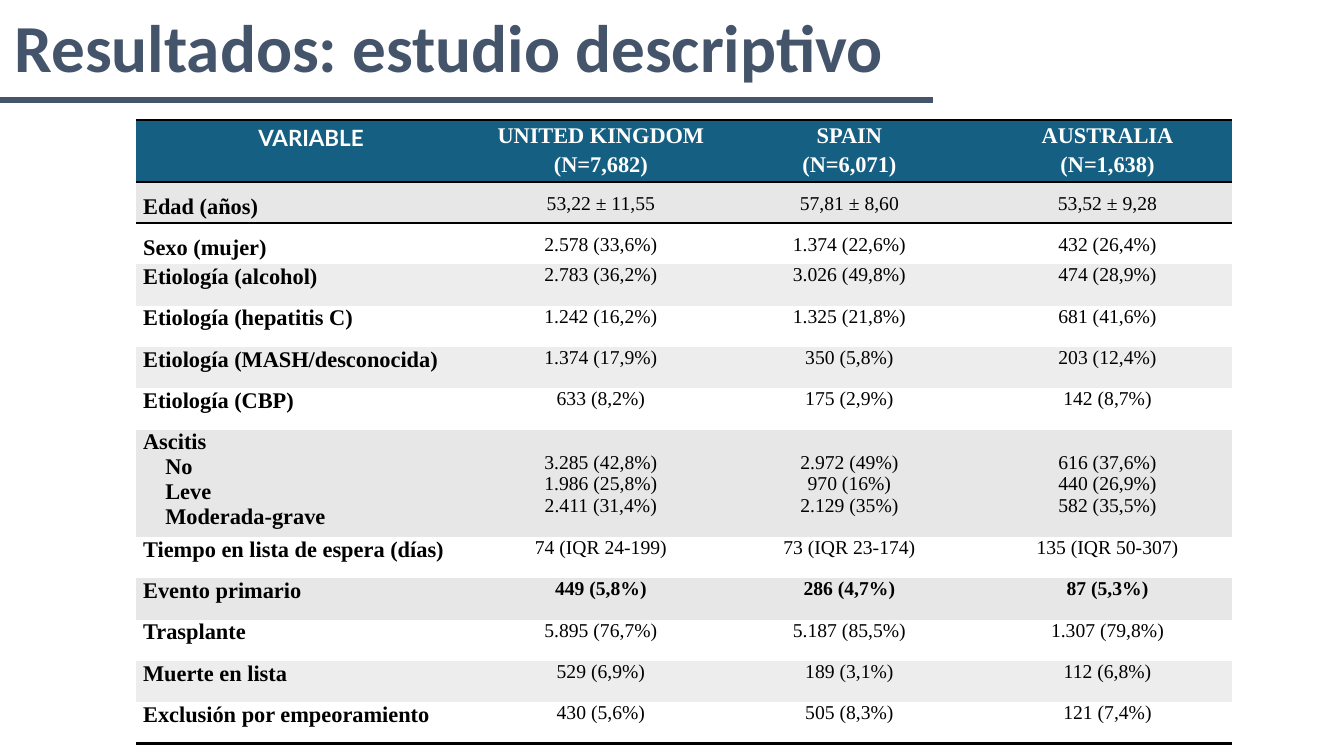
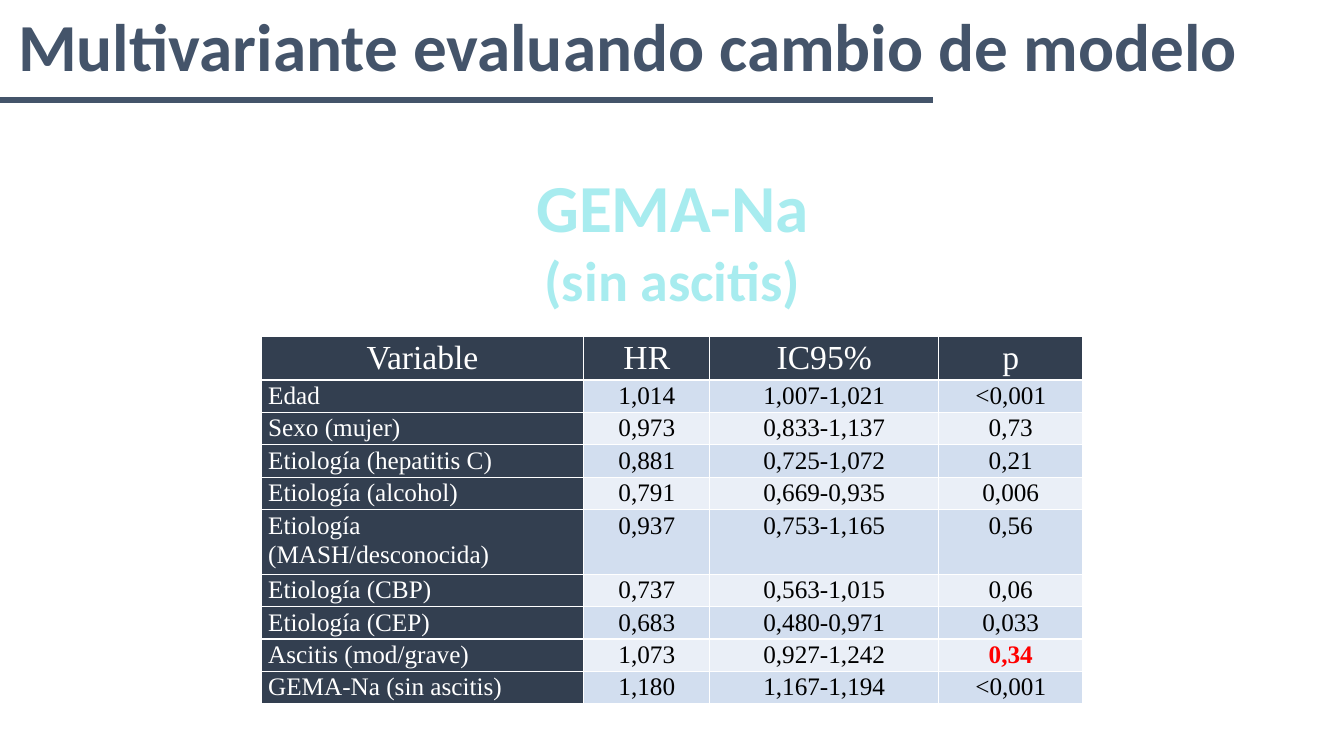
import pptx
import pptx.dml.color
import pptx.enum.shapes
import pptx.enum.text
import pptx.oxml
import pptx.oxml.ns
import pptx.util
from pptx.util import Inches

SLATE = "44546A"
NAVY = "333F50"
TEAL = "156082"
AQUA = "A8ECEF"
BLACK = "000000"
WHITE = "FFFFFF"
RED = "FF0000"
GREY = "E7E7E7"
LIGHT_GREY = "EDEDED"
BLUE_BANDS = ("D2DEEF", "EAEFF7")

SERIF = "Times New Roman"
NO_GRID_STYLE = "{2D5ABB26-0587-4C30-8999-92F81FD0307C}"
CENTER = pptx.enum.text.PP_ALIGN.CENTER
LEFT = pptx.enum.text.PP_ALIGN.LEFT
TITLE_FONT = {"name": "Calibri", "size": pptx.util.Pt(48), "bold": True}
CELL_MARGINS = {
    "margin_left": Inches(0.07),
    "margin_right": Inches(0.07),
    "margin_top": 0,
    "margin_bottom": 0,
}

DESCRIPTIVE_ROWS = [
    ("VARIABLE", "UNITED KINGDOM (N=7,682)", "SPAIN\n(N=6,071)", "AUSTRALIA\n(N=1,638)"),
    ("Edad (años)", "53,22 ± 11,55", "57,81 ± 8,60", "53,52 ± 9,28"),
    ("Sexo (mujer)", "2.578 (33,6%)", "1.374 (22,6%)", "432 (26,4%)"),
    ("Etiología (alcohol)", "2.783 (36,2%)", "3.026 (49,8%)", "474 (28,9%)"),
    ("Etiología (hepatitis C)", "1.242 (16,2%)", "1.325 (21,8%)", "681 (41,6%)"),
    ("Etiología (MASH/desconocida)", "1.374 (17,9%)", "350 (5,8%)", "203 (12,4%)"),
    ("Etiología (CBP)", "633 (8,2%)", "175 (2,9%)", "142 (8,7%)"),
    (
        "Ascitis\nNo\nLeve\nModerada-grave",
        "3.285 (42,8%)\n1.986 (25,8%)\n2.411 (31,4%)",
        "2.972 (49%)\n970 (16%)\n2.129 (35%)",
        "616 (37,6%)\n440 (26,9%)\n582 (35,5%)",
    ),
    ("Tiempo en lista de espera (días)", "74 (IQR 24-199)", "73 (IQR 23-174)", "135 (IQR 50-307)"),
    ("Evento primario", "449 (5,8%)", "286 (4,7%)", "87 (5,3%)"),
    ("Trasplante", "5.895 (76,7%)", "5.187 (85,5%)", "1.307 (79,8%)"),
    ("Muerte en lista", "529 (6,9%)", "189 (3,1%)", "112 (6,8%)"),
    ("Exclusión por empeoramiento", "430 (5,6%)", "505 (8,3%)", "121 (7,4%)"),
]

MULTIVARIATE_ROWS = [
    ("Variable", "HR", "IC95%", "p"),
    ("Edad", "1,014", "1,007-1,021", "<0,001"),
    ("Sexo (mujer)", "0,973", "0,833-1,137", "0,73"),
    ("Etiología (hepatitis C)", "0,881", "0,725-1,072", "0,21"),
    ("Etiología (alcohol)", "0,791", "0,669-0,935", "0,006"),
    ("Etiología (MASH/desconocida)", "0,937", "0,753-1,165", "0,56"),
    ("Etiología (CBP)", "0,737", "0,563-1,015", "0,06"),
    ("Etiología (CEP)", "0,683", "0,480-0,971", "0,033"),
    ("Ascitis (mod/grave)", "1,073", "0,927-1,242", "0,34"),
    ("GEMA-Na (sin ascitis)", "1,180", "1,167-1,194", "<0,001"),
]


def color(value):
    return pptx.dml.color.RGBColor.from_string(value)


def apply(target, formats):
    for name, value in formats.items():
        setattr(target, name, value)


def style_font(font, formats, font_color):
    apply(font, formats)
    font.color.rgb = color(font_color)


def add_text(slide, box, runs, font_color, wrap):
    shape = slide.shapes.add_textbox(*map(Inches, box))
    shape.text_frame.word_wrap = wrap
    paragraph = shape.text_frame.paragraphs[0]
    paragraph.alignment = CENTER
    for text, size in runs:
        run = paragraph.add_run()
        run.text = text
        style_font(run.font, {**TITLE_FONT, "size": pptx.util.Pt(size)}, font_color)


def add_titled_slide(presentation, title, box):
    slide = presentation.slides.add_slide(presentation.slide_layouts[6])
    rule = slide.shapes.add_connector(
        pptx.enum.shapes.MSO_CONNECTOR.STRAIGHT,
        Inches(0), Inches(0.99), Inches(9.25), Inches(0.99),
    )
    rule.line.width = pptx.util.Pt(4)
    rule.line.color.rgb = color(SLATE)
    properties = rule._element.spPr
    properties.append(properties.makeelement(pptx.oxml.ns.qn("a:effectLst"), {}))
    add_text(slide, box, [(title, 48)], SLATE, False)
    return slide


def add_border(cell, side, line_color, points):
    namespace = pptx.oxml.ns.nsdecls("a")
    line = pptx.oxml.parse_xml(
        f'<a:ln{side} {namespace} w="{pptx.util.Pt(points)}"><a:solidFill>'
        f'<a:srgbClr val="{line_color}"/></a:solidFill></a:ln{side}>'
    )
    cell._tc.get_or_add_tcPr().append(line)


def fill_cell(cell, text, font, font_color, fill, alignment, spacing, borders):
    for side, line_color, points in borders:
        add_border(cell, side, line_color, points)
    cell.fill.solid()
    cell.fill.fore_color.rgb = color(fill)
    apply(cell, CELL_MARGINS)
    cell.text = text
    for paragraph in cell.text_frame.paragraphs:
        apply(paragraph, {"alignment": alignment, "line_spacing": spacing})
        for run in paragraph.runs:
            style_font(run.font, font, font_color)


def add_grid(slide, left, top, widths, heights, rows, cell_format):
    frame = slide.shapes.add_table(
        len(rows), len(widths),
        Inches(left), Inches(top), Inches(sum(widths)), Inches(sum(heights)),
    )
    table = frame.table
    apply(table, {"first_row": False, "horz_banding": False})
    table._tbl.tblPr.find(pptx.oxml.ns.qn("a:tableStyleId")).text = NO_GRID_STYLE
    for column, width in zip(table.columns, widths):
        column.width = Inches(width)
    for row, height in zip(table.rows, heights):
        row.height = Inches(height)
    for row_index, texts in enumerate(rows):
        for column_index, text in enumerate(texts):
            cell = table.cell(row_index, column_index)
            fill_cell(cell, text, **cell_format(row_index, column_index, texts))
    return table


def descriptive_format(row, column, texts):
    header, label = row == 0, column == 0
    if header:
        fill, spacing = TEAL, 1.15
    else:
        strong = texts[0].startswith(("Edad", "Ascitis", "Evento"))
        fill = GREY if strong else LIGHT_GREY if row % 2 else WHITE
        spacing = 1.5 if row < 3 else 1.0
    borders = []
    if row < 2:
        borders.append(("T", BLACK, 2))
    if header or row == len(DESCRIPTIVE_ROWS) - 1:
        borders.append(("B", BLACK, 2))
    return {
        "font": {
            "name": "Lato" if header and label else SERIF,
            "size": pptx.util.Pt(16 if header or label else 14),
            "bold": header or label or texts[0] == "Evento primario",
        },
        "font_color": WHITE if header else BLACK,
        "fill": fill,
        "alignment": LEFT if label and not header else CENTER,
        "spacing": spacing,
        "borders": borders,
    }


def multivariate_format(row, column, texts):
    header, label = row == 0, column == 0
    highlight = texts[column] == "0,34"
    dark = header or label
    return {
        "font": {
            "name": SERIF,
            "size": pptx.util.Pt(24 if header else 18),
            "bold": highlight,
        },
        "font_color": WHITE if dark else RED if highlight else BLACK,
        "fill": NAVY if dark else BLUE_BANDS[(row - 1) % 2],
        "alignment": LEFT if label and not header else CENTER,
        "spacing": 1.07,
        "borders": [(side, WHITE, 1) for side in "LRTB"],
    }


def indent_ascites_grades(table):
    row = next(i for i, texts in enumerate(DESCRIPTIVE_ROWS) if texts[0].startswith("Ascitis"))
    label, *values = table.rows[row].cells
    for paragraph in label.text_frame.paragraphs[1:]:
        paragraph._p.get_or_add_pPr().set("marL", str(Inches(0.22)))
    for cell in values:
        cell.margin_top = Inches(0.22)


def build_descriptive(presentation):
    slide = add_titled_slide(presentation, "Resultados: estudio descriptivo", (0, 0, 8.91, 0.91))
    heights = [
        0.57 if row == 0 else 0.98 if "\n" in texts[0] else 0.41
        for row, texts in enumerate(DESCRIPTIVE_ROWS)
    ]
    table = add_grid(
        slide, 1.35, 1.19, (3.47, 2.28, 2.65, 2.47), heights, DESCRIPTIVE_ROWS, descriptive_format
    )
    indent_ascites_grades(table)


def build_multivariate(presentation):
    slide = add_titled_slide(
        presentation, "Multivariante evaluando cambio de modelo", (0.02, -0.01, 12.42, 0.91)
    )
    add_text(slide, (5.04, 1.59, 3.26, 1.58), [("GEMA-Na ", 48), ("(sin ascitis)", 40)], AQUA, True)
    heights = [
        0.43 if row == 0 else 0.64 if "MASH" in texts[0] else 0.32
        for row, texts in enumerate(MULTIVARIATE_ROWS)
    ]
    add_grid(
        slide, 2.59, 3.34, (3.2, 1.25, 2.27, 1.43), heights, MULTIVARIATE_ROWS, multivariate_format
    )


def main():
    presentation = pptx.Presentation()
    apply(presentation, {"slide_width": Inches(13.33), "slide_height": Inches(7.5)})
    build_descriptive(presentation)
    build_multivariate(presentation)
    presentation.save("out.pptx")


if __name__ == "__main__":
    main()
